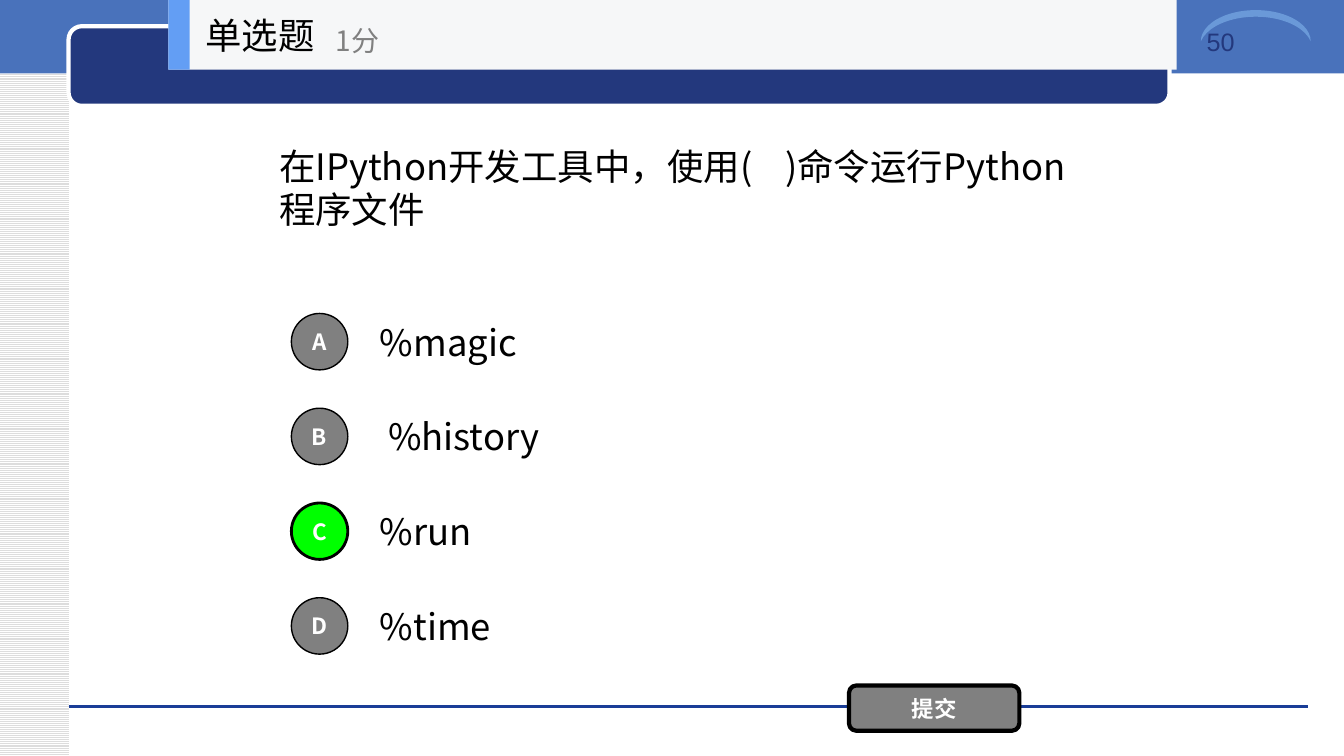
from dataclasses import dataclass

from lxml import etree
from pptx import Presentation
from pptx import util as u
from pptx.dml.color import RGBColor
from pptx.enum import dml, shapes, text
from pptx.oxml.ns import qn

SHAPE = shapes.MSO_SHAPE


@dataclass(frozen=True)
class Theme:
    white: str = "FFFFFF"
    black: str = "000000"
    grey: str = "808080"
    stripe: str = "DDDDDD"
    band: str = "4972BB"
    navy: str = "23387D"
    rule: str = "1A3D97"
    arc: str = "6A99D8"
    bar: str = "F6F7F8"
    accent: str = "639EF4"
    correct: str = "00FF00"
    cjk: str = "Noto Sans CJK SC"
    latin: str = "Arial"
    body_size: int = 26
    score_size: int = 20
    page_size: int = 18
    badge_size: int = 16


THEME = Theme()


@dataclass(frozen=True)
class Box:
    left: float
    top: float
    width: float
    height: float

    def lengths(self) -> list:
        return [u.Inches(v) for v in (self.left, self.top, self.width, self.height)]


@dataclass(frozen=True)
class Style:
    size: int = THEME.body_size
    color: str = THEME.black
    font: str = THEME.cjk
    bold: bool = False


@dataclass(frozen=True)
class Panel:
    kind: SHAPE
    box: Box
    fill: str
    line: str = ""
    line_width: float = 0
    adjust: float | None = None
    rotation: float = 0


@dataclass(frozen=True)
class Option:
    letter: str
    answer: str
    correct: bool = False


BADGE = Style(THEME.badge_size, THEME.white, bold=True)
OPTIONS = [
    Option("A", "%magic"),
    Option("B", " %history"),
    Option("C", "%run", correct=True),
    Option("D", "%time"),
]
OPTION_TOP, OPTION_STEP = 3.04, 0.94

HEADER = [
    Panel(SHAPE.ROUNDED_RECTANGLE, Box(0.68, 0.26, 10.92, 0.79), THEME.navy, THEME.white, 3, 0.167),
    Panel(SHAPE.MOON, Box(12.3, -0.29, 0.31, 1.09), THEME.arc, adjust=0.212, rotation=90),
]
TITLE_BAR = [
    Panel(SHAPE.RECTANGLE, Box(1.67, 0, 10, 0.69), THEME.bar),
    Panel(SHAPE.RECTANGLE, Box(1.67, 0, 0.21, 0.69), THEME.accent),
]


def write(shape, words: str, style: Style, align=text.PP_ALIGN.LEFT,
          anchor=text.MSO_ANCHOR.MIDDLE) -> None:
    frame = shape.text_frame
    frame.word_wrap = True
    frame.vertical_anchor = anchor
    paragraph = frame.paragraphs[0]
    paragraph.alignment = align
    run = paragraph.add_run()
    run.text = words
    formats = {"name": style.font, "size": u.Pt(style.size), "bold": style.bold}
    for attribute, value in formats.items():
        setattr(run.font, attribute, value)
    run.font.color.rgb = RGBColor.from_string(style.color)
    east_asian = etree.SubElement(run.font._element, qn("a:ea"))
    east_asian.set("typeface", style.font)


def add_panel(slide, panel: Panel):
    shape = slide.shapes.add_shape(panel.kind, *panel.box.lengths())
    shape.shadow.inherit = False
    shape.rotation = panel.rotation
    shape.fill.solid()
    shape.fill.fore_color.rgb = RGBColor.from_string(panel.fill)
    if panel.line:
        shape.line.color.rgb = RGBColor.from_string(panel.line)
        shape.line.width = u.Pt(panel.line_width)
    else:
        shape.line.fill.background()
    if panel.adjust is not None:
        shape.adjustments[0] = panel.adjust
    return shape


def add_label(slide, box: Box, words: str, style: Style = Style(),
              anchor=text.MSO_ANCHOR.MIDDLE) -> None:
    write(slide.shapes.add_textbox(*box.lengths()), words, style, anchor=anchor)


def add_badge(slide, panel: Panel, words: str) -> None:
    """Draw a filled shape with centred bold text."""
    badge = add_panel(slide, panel)
    for side in ("left", "right", "top", "bottom"):
        setattr(badge.text_frame, f"margin_{side}", 0)
    write(badge, words, BADGE, text.PP_ALIGN.CENTER)


def add_backdrop(slide) -> None:
    margin = add_panel(slide, Panel(SHAPE.RECTANGLE, Box(0, 0, 0.68, 7.5), THEME.white))
    margin.fill.patterned()
    margin.fill.pattern = dml.MSO_PATTERN.LIGHT_HORIZONTAL
    margin.fill.fore_color.rgb = RGBColor.from_string(THEME.stripe)
    margin.fill.back_color.rgb = RGBColor.from_string(THEME.white)
    add_panel(slide, Panel(SHAPE.RECTANGLE, Box(0, -0.03, 13.33, 0.76), THEME.band))
    ends = [u.Inches(v) for v in (0.68, 7.01, 12.97, 7.01)]
    footer_rule = slide.shapes.add_connector(shapes.MSO_CONNECTOR.STRAIGHT, *ends)
    footer_rule.line.color.rgb = RGBColor.from_string(THEME.rule)
    footer_rule.line.width = u.Pt(0)
    etree.SubElement(footer_rule._element.spPr, qn("a:effectLst"))
    for panel in HEADER:
        add_panel(slide, panel)


def add_option(slide, option: Option, top: float) -> None:
    add_label(slide, Box(3.67, top, 7, 0.7), option.answer)
    fill, width = (THEME.correct, 2) if option.correct else (THEME.grey, 1)
    circle = Panel(SHAPE.OVAL, Box(2.89, top + 0.07, 0.56, 0.56), fill, THEME.black, width)
    add_badge(slide, circle, option.letter)


def main() -> None:
    deck = Presentation()
    deck.slide_width, deck.slide_height = u.Inches(13.33), u.Inches(7.5)
    slide = deck.slides.add_slide(deck.slide_layouts[6])

    add_backdrop(slide)
    add_label(slide, Box(11.87, 0.21, 1.21, 0.71), "50",
              Style(THEME.page_size, THEME.navy, THEME.latin), text.MSO_ANCHOR.TOP)
    add_label(slide, Box(2.67, 0.69, 8, 2.34),
              "在IPython开发工具中，使用(    )命令运行Python程序文件")
    for row, option in enumerate(OPTIONS):
        add_option(slide, option, OPTION_TOP + row * OPTION_STEP)
    submit = Panel(SHAPE.ROUNDED_RECTANGLE, Box(8.42, 6.8, 1.69, 0.45),
                   THEME.grey, THEME.black, 3)
    add_badge(slide, submit, "提交")

    for panel in TITLE_BAR:
        add_panel(slide, panel)
    add_label(slide, Box(1.94, 0, 2.08, 0.69), "单选题")
    add_label(slide, Box(3.23, 0.12, 2.5, 0.56), "1分", Style(THEME.score_size, THEME.grey))
    deck.save("out.pptx")


if __name__ == "__main__":
    main()
